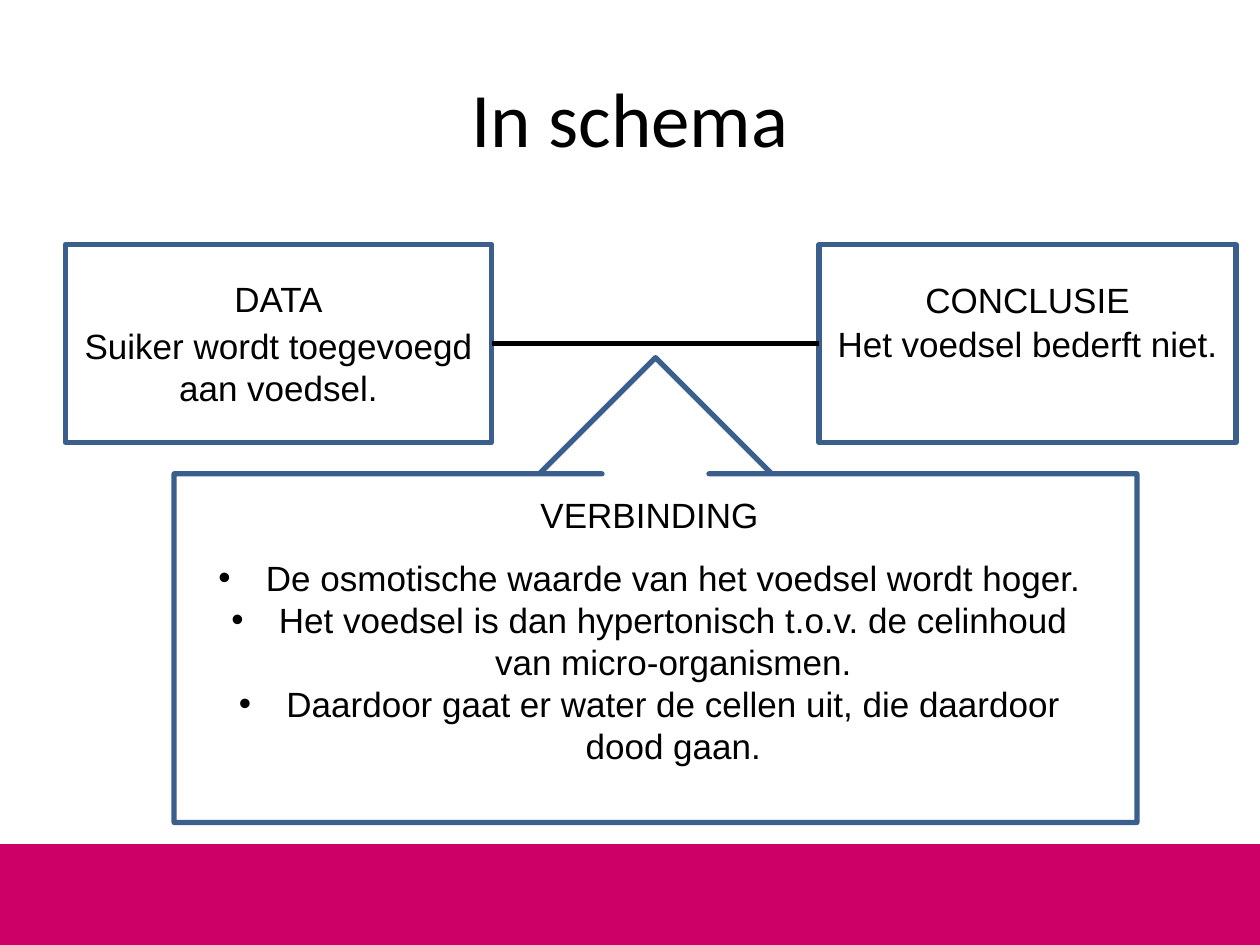
from lxml.etree import SubElement
from pptx import Presentation
from pptx.dml.color import RGBColor
from pptx.enum.shapes import MSO_CONNECTOR, MSO_SHAPE
from pptx.enum.text import MSO_ANCHOR, PP_ALIGN
from pptx.oxml.ns import qn
from pptx.util import Cm, Pt

COLORS = {"bar": "CC0066", "outline": "3A5F8C", "text": "000000"}
BOX_TOP, BOX_HEIGHT = 4.93, 3.99
INDENT = Cm(0.96)


def rgb(name):
    return RGBColor.from_string(COLORS[name])


def write(p, text, size=20, font="Arial", line=Pt(24), before=0, bullet=False):
    if bullet:
        pPr = p._p.get_or_add_pPr()
        pPr.set("marL", str(INDENT))
        pPr.set("indent", str(-INDENT))
        SubElement(pPr, qn("a:buFont")).set("typeface", "Arial")
        SubElement(pPr, qn("a:buChar")).set("char", "•")
    p.alignment = PP_ALIGN.CENTER
    p.line_spacing = line
    p.space_before = Pt(before)
    r = p.add_run()
    r.text = text
    r.font.size = Pt(size)
    r.font.name = font
    r.font.color.rgb = rgb("text")


def fill_frame(tf, items, margin_top):
    tf.word_wrap = True
    tf.vertical_anchor = MSO_ANCHOR.TOP
    tf.margin_top = Cm(margin_top)
    for i, (text, fmt) in enumerate(items):
        p = tf.add_paragraph() if i else tf.paragraphs[0]
        write(p, text, **fmt)


def add_title(s, text):
    sp = s.shapes.title
    sp.left, sp.top, sp.width, sp.height = Cm(1.27), Cm(0.76), Cm(22.86), Cm(3.18)
    sp.text_frame.vertical_anchor = MSO_ANCHOR.MIDDLE
    write(sp.text_frame.paragraphs[0], text, size=44, font="Calibri", line=1.0)


def add_shape(s, kind, left, top, width, height, fill=None, line=None):
    sp = s.shapes.add_shape(kind, Cm(left), Cm(top), Cm(width), Cm(height))
    sp.shadow.inherit = False
    if fill:
        sp.fill.solid()
        sp.fill.fore_color.rgb = rgb(fill)
    else:
        sp.fill.background()
    if line:
        sp.line.color.rgb = rgb(line)
        sp.line.width = Pt(3)
    else:
        sp.line.fill.background()
    return sp


def add_box(s, left, width, heading, body, gap, margin_top):
    sp = add_shape(s, MSO_SHAPE.RECTANGLE, left, BOX_TOP, width, BOX_HEIGHT,
                   line="outline")
    fill_frame(sp.text_frame, [(heading, {}), (body, {"before": gap})], margin_top)
    return sp


def add_link(s, start, end):
    cx = s.shapes.add_connector(MSO_CONNECTOR.STRAIGHT, 0, 0, 0, 0)
    cx.begin_connect(start, 3)
    cx.end_connect(end, 1)
    cx.line.color.rgb = rgb("text")
    cx.line.width = Pt(3)
    SubElement(cx._element.spPr, qn("a:effectLst"))


def add_callout(s, heading, reasons):
    sp = add_shape(s, MSO_SHAPE.UP_ARROW_CALLOUT, 3.51, 7.21, 19.41, 9.37,
                   line="outline")
    for i, value in enumerate((0.23, 0.25, 0.25, 0.75)):
        sp.adjustments[i] = value
    tb = s.shapes.add_textbox(Cm(4.09), Cm(9.8), Cm(18.01), Cm(6.17))
    items = [(heading, {})]
    for i, reason in enumerate(reasons):
        items.append((reason, {"bullet": True, "before": 0 if i else 12}))
    fill_frame(tb.text_frame, items, 0.14)


def main():
    prs = Presentation()
    prs.slide_width, prs.slide_height = Cm(25.4), Cm(19.05)
    s = prs.slides.add_slide(prs.slide_layouts[5])
    add_shape(s, MSO_SHAPE.RECTANGLE, 0, 17.02, 25.4, 2.03, fill="bar")
    add_title(s, "In schema")
    data = add_box(s, 1.32, 8.59, "DATA", "Suiker wordt toegevoegd aan voedsel.",
                   gap=3, margin_top=0.66)
    conclusion = add_box(s, 16.51, 8.41, "CONCLUSIE", "Het voedsel bederft niet.",
                         gap=1, margin_top=0.68)
    add_link(s, data, conclusion)
    add_callout(s, "VERBINDING", [
        "De osmotische waarde van het voedsel wordt hoger.",
        "Het voedsel is dan hypertonisch t.o.v. de celinhoud van micro-organismen.",
        "Daardoor gaat er water de cellen uit, die daardoor dood gaan.",
    ])
    prs.save("out.pptx")


if __name__ == "__main__":
    main()
